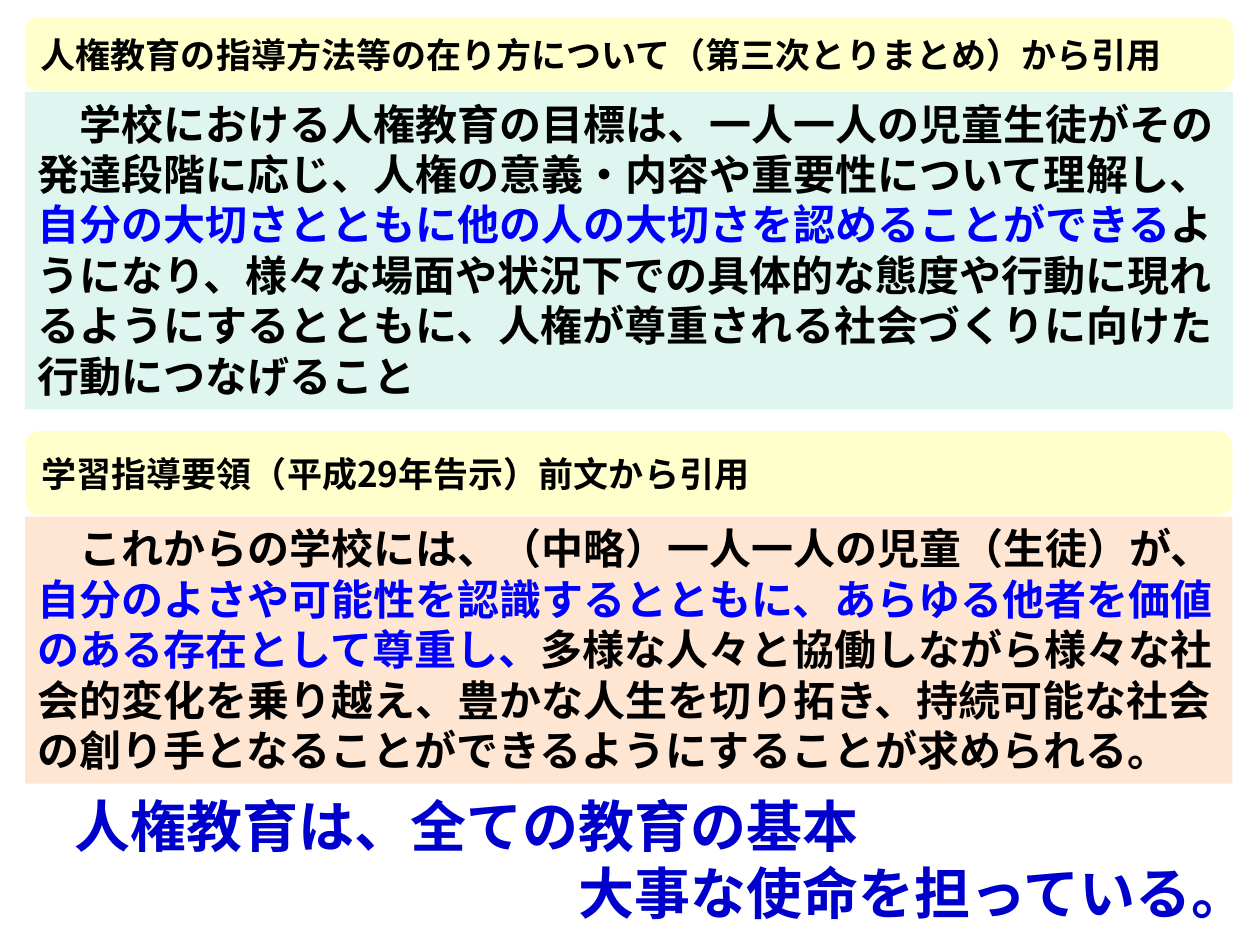
from dataclasses import dataclass

import pptx
import pptx.dml.color
import pptx.enum.shapes
import pptx.enum.text
import pptx.oxml.ns
import pptx.util
from lxml import etree

Pt = pptx.util.Pt


@dataclass(frozen=True)
class Theme:
    font: str = "Noto Sans CJK JP"
    latin: str = "Karla"
    text: str = "000000"
    highlight: str = "0000FF"
    message: str = "0000CC"
    heading_fill: str = "FFFFCC"
    goal_fill: str = "DFF5EF"
    preamble_fill: str = "FFE6D3"
    heading_size: int = 20
    passage_size: int = 24
    message_size: int = 32
    leading: float = 1.2


theme = Theme()


def color(value):
    return pptx.dml.color.RGBColor.from_string(value)


def apply(target, values):
    for name, value in values.items():
        setattr(target, name, value)


def add_run(paragraph, text, size, text_color, latin=theme.font):
    run = paragraph.add_run()
    run.text = text
    apply(run.font, {"name": latin, "size": Pt(size), "bold": True})
    run.font.color.rgb = color(text_color)
    east_asian = etree.Element(pptx.oxml.ns.qn("a:ea"), typeface=theme.font)
    run.font._element.find(pptx.oxml.ns.qn("a:latin")).addnext(east_asian)


def format_paragraph(paragraph, size, margin=0, indent=0):
    properties = paragraph._p.get_or_add_pPr()
    for name, value in {"marL": Pt(margin), "indent": Pt(indent), "hangingPunct": 1}.items():
        properties.set(name, str(int(value)))
    apply(paragraph, {
        "alignment": pptx.enum.text.PP_ALIGN.LEFT,
        "line_spacing": Pt(size * theme.leading),
        "space_before": Pt(0),
    })


def format_frame(frame, anchor):
    apply(frame, {
        "word_wrap": True,
        "auto_size": pptx.enum.text.MSO_AUTO_SIZE.NONE,
        "vertical_anchor": anchor,
    })


def add_panel(slide, kind, box, fill, anchor):
    shape = slide.shapes.add_shape(kind, *map(Pt, box))
    shape.shadow.inherit = False
    shape.fill.solid()
    shape.fill.fore_color.rgb = color(fill)
    shape.line.fill.background()
    format_frame(shape.text_frame, anchor)
    return shape.text_frame.paragraphs[0]


def add_quotation(slide, box, heading_height, heading, fill, runs, latin=theme.font):
    left, top, width, height = box
    kinds = pptx.enum.shapes.MSO_SHAPE
    anchors = pptx.enum.text.MSO_ANCHOR
    passage_top = heading_height + 0.7

    passage = add_panel(slide, kinds.RECTANGLE,
                        (left, top + passage_top, width, height - passage_top),
                        fill, anchors.TOP)
    format_paragraph(passage, theme.passage_size, indent=theme.passage_size)
    for text, text_color in runs:
        add_run(passage, text, theme.passage_size, text_color, latin)

    title = add_panel(slide, kinds.ROUNDED_RECTANGLE, (left, top, width, heading_height),
                      theme.heading_fill, anchors.MIDDLE)
    format_paragraph(title, theme.heading_size)
    add_run(title, heading, theme.heading_size, theme.text)


def place_message(slide, box, lines):
    title = slide.shapes.title
    apply(title, dict(zip(("left", "top", "width", "height"), map(Pt, box))))
    frame = title.text_frame
    format_frame(frame, pptx.enum.text.MSO_ANCHOR.TOP)
    for index, (text, indent_characters) in enumerate(lines):
        paragraph = frame.add_paragraph() if index else frame.paragraphs[0]
        format_paragraph(paragraph, theme.message_size,
                         margin=indent_characters * theme.message_size)
        add_run(paragraph, text, theme.message_size, theme.message)


def main():
    presentation = pptx.Presentation()
    apply(presentation, {"slide_width": Pt(720), "slide_height": Pt(540)})
    slide = presentation.slides.add_slide(presentation.slide_layouts.get_by_name("Title Only"))

    place_message(slide, (35.3, 448.5, 669, 85), [
        ("人権教育は、全ての教育の基本", 0),
        ("大事な使命を担っている。", 9),
    ])
    add_quotation(
        slide, (14.2, 10, 690.3, 224), 41.8,
        "人権教育の指導方法等の在り方について（第三次とりまとめ）から引用",
        theme.goal_fill, [
            ("学校における人権教育の目標は、一人一人の児童生徒がその発達段階に応じ、"
             "人権の意義・内容や重要性について理解し、", theme.text),
            ("自分の大切さとともに他の人の大切さを認めることができる", theme.highlight),
            ("ようになり、様々な場面や状況下での具体的な態度や行動に現れるようにするとともに、"
             "人権が尊重される社会づくりに向けた行動につなげること", theme.text),
        ])
    add_quotation(
        slide, (14.4, 246.4, 689.8, 201.4), 48.2,
        "学習指導要領（平成29年告示）前文から引用",
        theme.preamble_fill, [
            ("これからの学校には、（中略）一人一人の児童（生徒）が、", theme.text),
            ("自分のよさや可能性を認識するとともに、"
             "あらゆる他者を価値のある存在として尊重し、", theme.highlight),
            ("多様な人々と協働しながら様々な社会的変化を乗り越え、豊かな人生を切り拓き、"
             "持続可能な社会の創り手となることができるようにすることが求められる。", theme.text),
        ], theme.latin)

    presentation.save("out.pptx")


if __name__ == "__main__":
    main()
